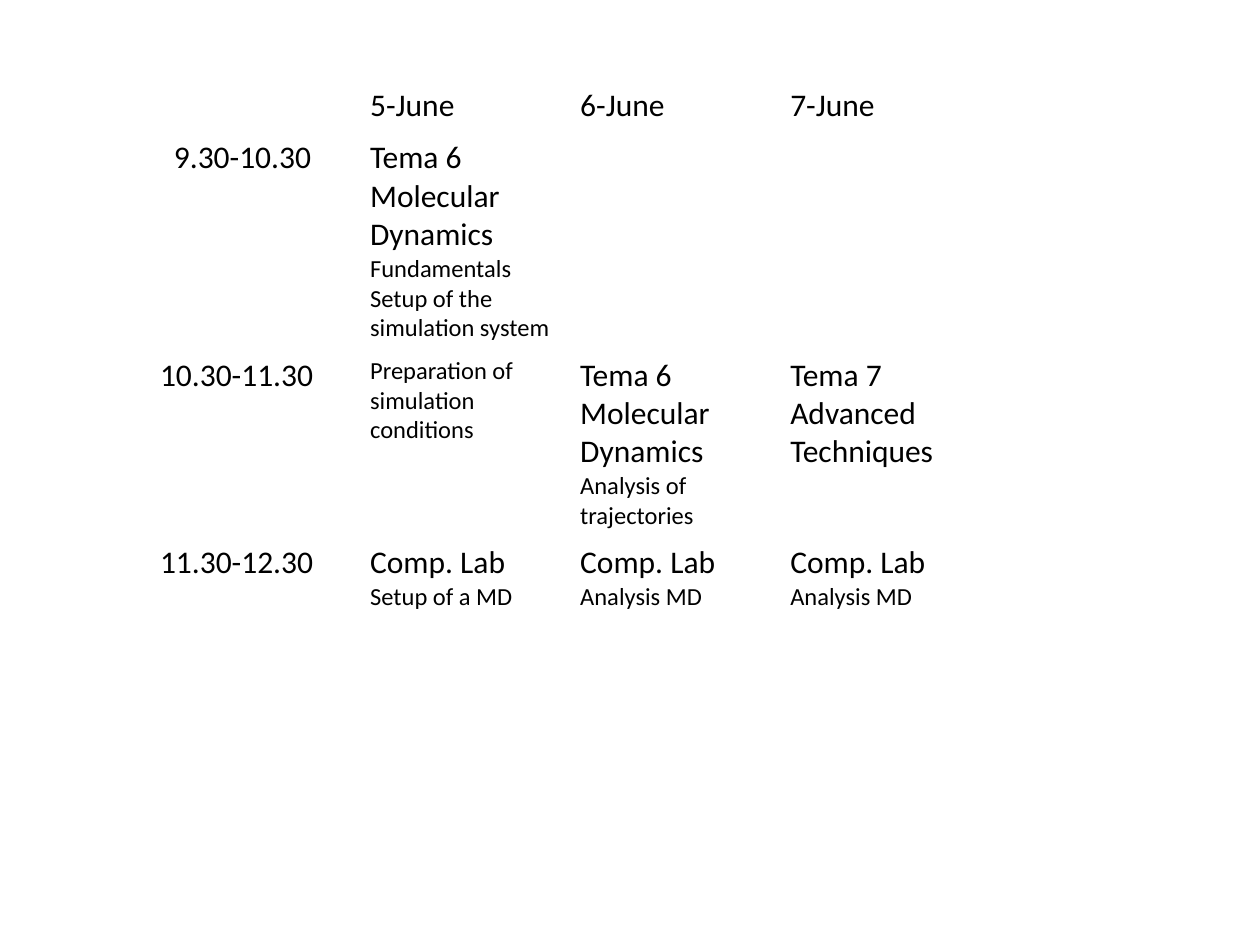
from pptx import Presentation
from pptx.dml.color import RGBColor as RGB
from pptx.util import Inches, Pt

COLORS = {"text": "000000"}
FONT = "Calibri"
TOPIC, DETAIL = 18, 14
INDENT = Inches(0.21)

MD = [("Tema 6", TOPIC), ("Molecular Dynamics", TOPIC)]
LAB = ("Comp. Lab", TOPIC)
ANALYSIS_LAB = [LAB, ("Analysis MD", DETAIL)]

SCHEDULE = [
    [[], [("5-June", TOPIC)], [("6-June", TOPIC)], [("7-June", TOPIC)]],
    [
        [("9.30-10.30", TOPIC)],
        MD + [("Fundamentals", DETAIL), ("Setup of the simulation system", DETAIL)],
        [],
        [],
    ],
    [
        [("10.30-11.30", TOPIC)],
        [("Preparation of simulation conditions", DETAIL)],
        MD + [("Analysis of trajectories", DETAIL)],
        [("Tema 7", TOPIC), ("Advanced Techniques", TOPIC)],
    ],
    [
        [("11.30-12.30", TOPIC)],
        [LAB, ("Setup of a MD", DETAIL)],
        ANALYSIS_LAB,
        ANALYSIS_LAB,
    ],
]


def fill_cell(cell, lines):
    cell.fill.background()
    tf = cell.text_frame
    tf.text = "\n".join(text for text, size in lines)
    for p, (text, size) in zip(tf.paragraphs, lines):
        for r in p.runs:
            r.font.name = FONT
            r.font.size = Pt(size)
            r.font.bold = False
            r.font.color.rgb = RGB.from_string(COLORS["text"])


def add_schedule(s, left, top, width, row_height):
    rows, cols = len(SCHEDULE), len(SCHEDULE[0])
    table = s.shapes.add_table(rows, cols, left, top, width, row_height * rows).table
    table.first_row = False
    table.horz_banding = False
    for i, row in enumerate(SCHEDULE):
        for j, lines in enumerate(row):
            fill_cell(table.cell(i, j), lines)
    table.cell(1, 0).margin_left = INDENT


def main():
    prs = Presentation()
    prs.slide_width, prs.slide_height = Inches(10), Inches(7.5)
    s = prs.slides.add_slide(prs.slide_layouts[6])
    add_schedule(s, Inches(1.17), Inches(0.64), Inches(6.67), Inches(0.41))
    prs.save("out.pptx")


if __name__ == "__main__":
    main()
